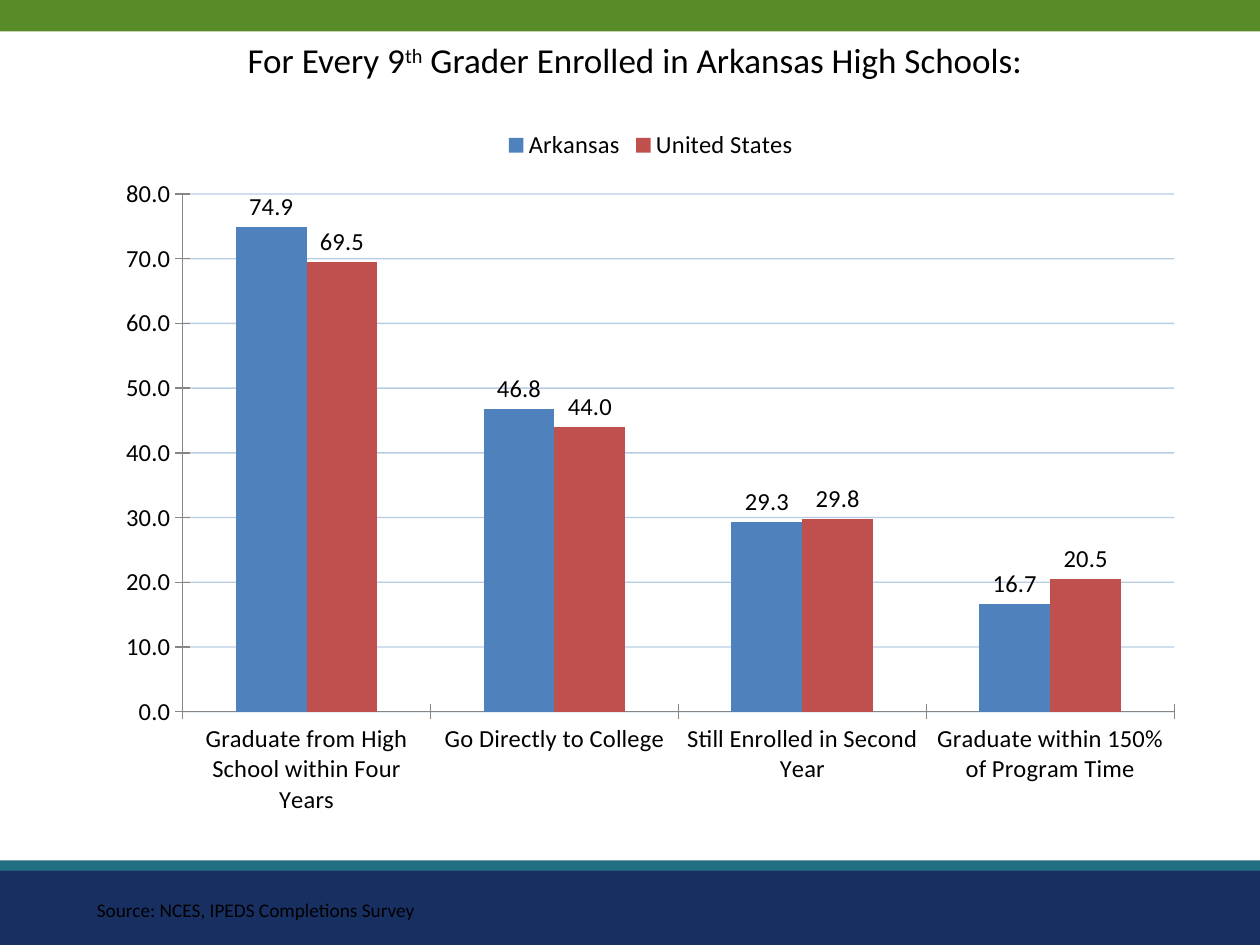
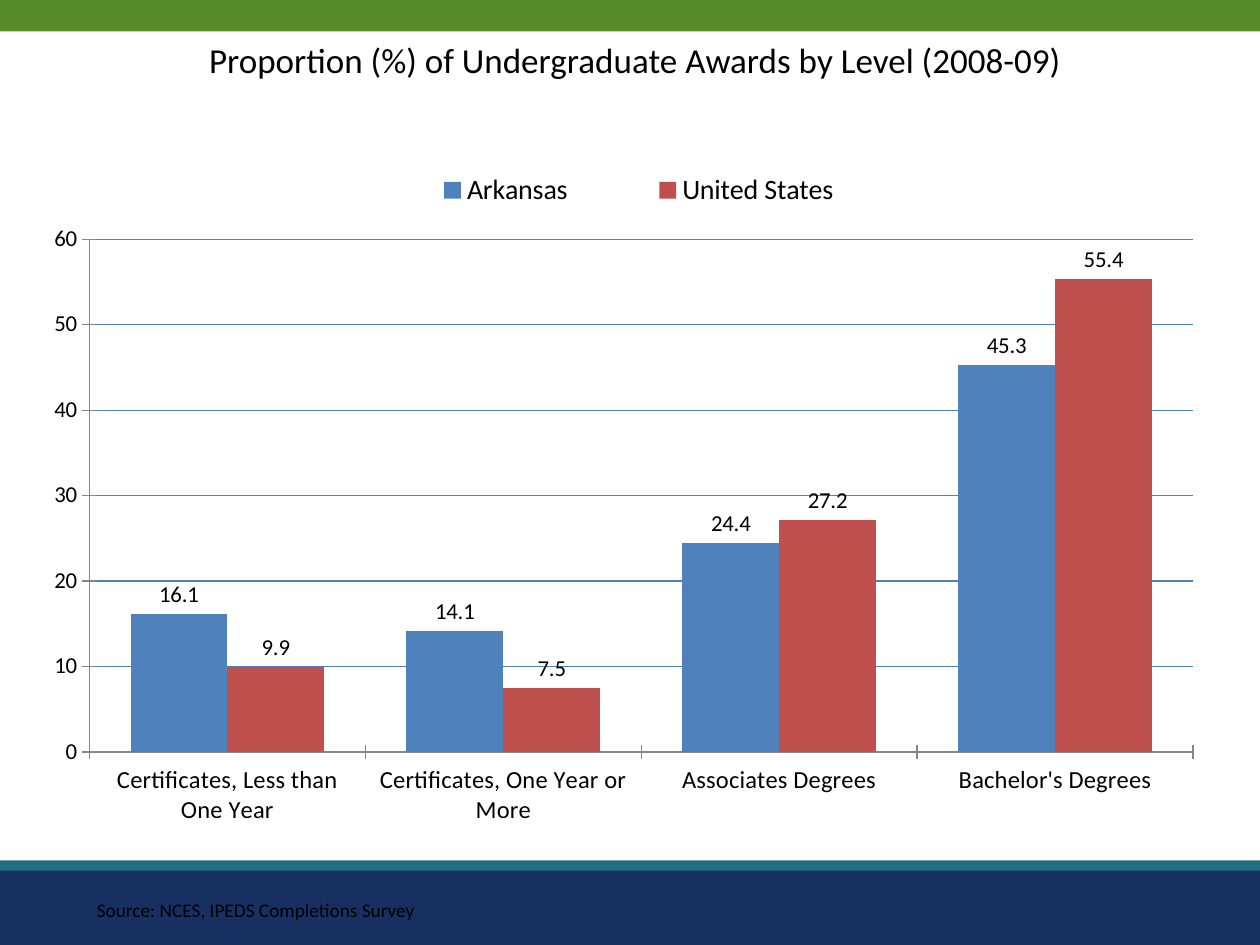
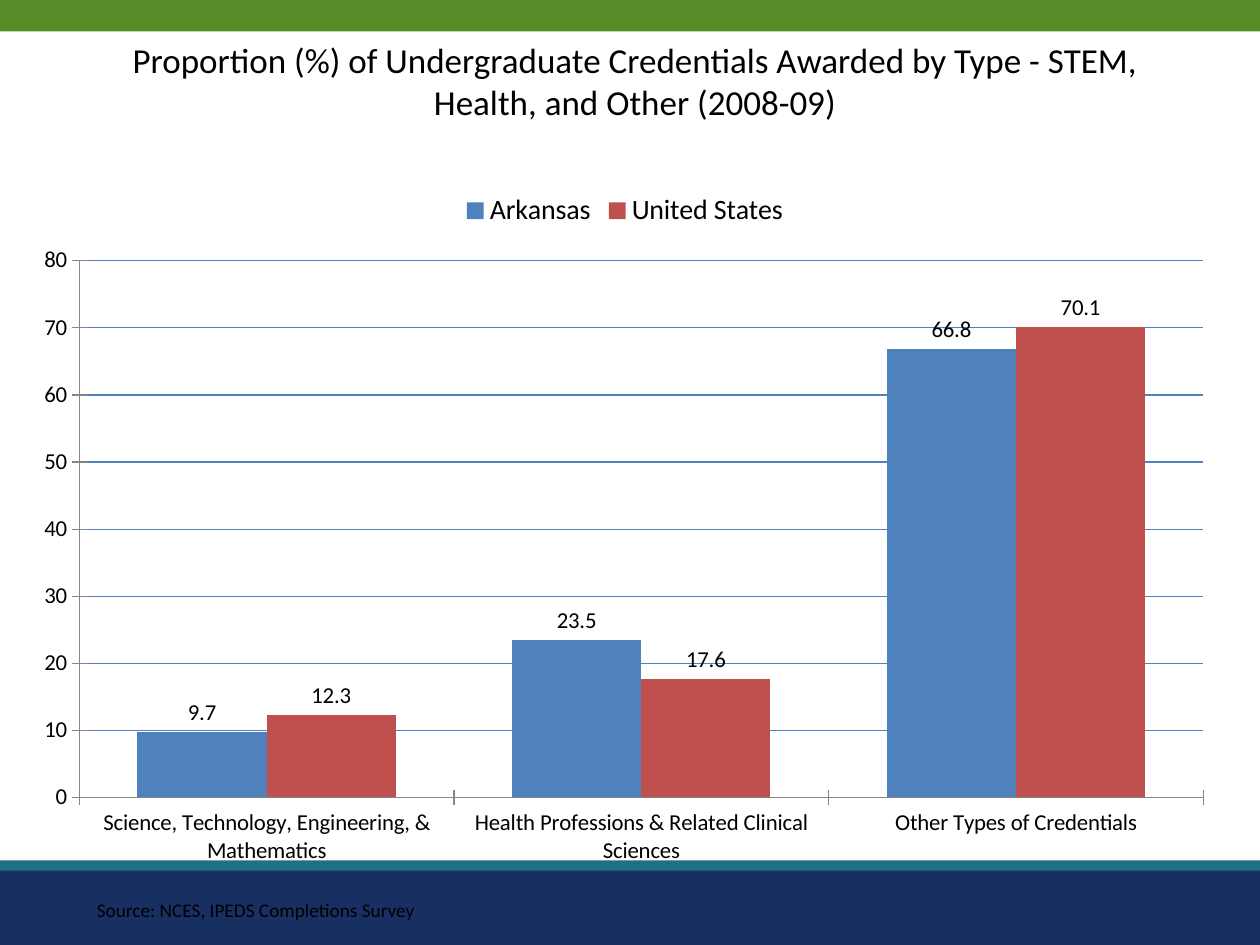
"""Build three column-chart slides on Arkansas education against the United States."""
from dataclasses import dataclass
from typing import NamedTuple, Optional

from lxml.etree import SubElement
from pptx import Presentation
from pptx.chart.axis import _BaseAxis
from pptx.chart.chart import Chart
from pptx.chart.data import CategoryChartData
from pptx.dml.color import RGBColor
from pptx.enum.chart import XL_CHART_TYPE, XL_LABEL_POSITION, XL_LEGEND_POSITION, XL_TICK_MARK
from pptx.enum.shapes import MSO_SHAPE
from pptx.enum.text import MSO_AUTO_SIZE, PP_ALIGN
from pptx.oxml.ns import qn
from pptx.oxml.xmlchemy import OxmlElement
from pptx.slide import Slide
from pptx.text.text import Font, _Paragraph
from pptx.util import Inches, Pt

NAVY = RGBColor(0x18, 0x2F, 0x62)
GREEN = RGBColor(0x58, 0x8C, 0x28)
TEAL = RGBColor(0x20, 0x6F, 0x82)
BLUE = RGBColor(0x4F, 0x81, 0xBD)
RED = RGBColor(0xC0, 0x50, 0x4D)
GRAY = RGBColor(0x86, 0x86, 0x86)
BLACK = RGBColor(0, 0, 0)
FONT = "Calibri"
SOURCE = "Source: NCES, IPEDS Completions Survey"
SERIES = (("Arkansas", BLUE), ("United States", RED))


class Box(NamedTuple):
    """A rectangle in inches."""
    x: float
    y: float
    w: float
    h: float

    def emu(self) -> list[int]:
        """Return the sides as lengths."""
        return [Inches(v) for v in self]

    def within(self, outer: "Box") -> list[float]:
        """Return the sides as fractions of an outer box."""
        return [(self.x - outer.x) / outer.w, (self.y - outer.y) / outer.h,
                self.w / outer.w, self.h / outer.h]


class Band(NamedTuple):
    """A coloured band across the slide."""
    box: Box
    color: RGBColor


@dataclass(frozen=True)
class ChartSlide:
    """Content of one slide; carets enclose superscript in the title."""
    title: str
    title_height: float
    frame: Box
    plot: Box
    categories: tuple[str, ...]
    values: tuple[tuple[float, ...], ...]
    top: int
    gap: int
    cat_size: int
    value_size: int
    legend_size: int
    axis_format: str
    label_format: str
    grid_alpha: int = 100
    legend: Optional[Box] = None


BANDS = (
    Band(Box(0, 6.83, 10, 0.67), NAVY),
    Band(Box(0, 0, 10, 0.25), GREEN),
    Band(Box(0, 6.83, 10, 0.08), TEAL),
)

SLIDES = (
    ChartSlide(
        "For Every 9^th^ Grader Enrolled in Arkansas High Schools:", 0.44,
        Box(0.83, 0.92, 8.67, 5.67), Box(1.45, 1.54, 7.87, 4.11),
        ("Graduate from High School within Four Years", "Go Directly to College",
         "Still Enrolled in Second Year", "Graduate within 150% of Program Time"),
        ((74.9, 46.8, 29.3, 16.7), (69.5, 44, 29.8, 20.5)),
        80, 150, 14, 14, 14, "0.0", "0.0", grid_alpha=40),
    ChartSlide(
        "Proportion (%) of Undergraduate Awards by Level (2008-09)", 0.44,
        Box(0.25, 1.25, 9.42, 5.41), Box(0.71, 1.9, 8.76, 4.07),
        ("Certificates, Less than One Year", "Certificates, One Year or More",
         "Associates Degrees", "Bachelor's Degrees"),
        ((16.1, 14.1, 24.4, 45.3), (9.9, 7.5, 27.2, 55.4)),
        60, 85, 14, 13, 16, "0", "0.0", legend=Box(2.87, 1.33, 4.4, 0.36)),
    ChartSlide(
        "Proportion (%) of Undergraduate Credentials Awarded by Type - STEM, "
        "Health, and Other (2008-09)", 0.77,
        Box(0.17, 1.42, 9.58, 5.56), Box(0.63, 2.07, 8.92, 4.26),
        ("Science, Technology, Engineering, & Mathematics",
         "Health Professions & Related Clinical Sciences", "Other Types of Credentials"),
        ((9.7, 23.5, 66.8), (12.3, 17.6, 70.1)),
        80, 90, 13, 13, 16, "#,##0", "#,##0.0"),
)


def style_font(font: Font, size: int) -> None:
    """Apply the shared typeface and colour at a size."""
    font.name, font.size, font.color.rgb = FONT, Pt(size), BLACK


def add_band(s: Slide, band: Band) -> None:
    """Draw a borderless band."""
    sp = s.shapes.add_shape(MSO_SHAPE.RECTANGLE, *band.box.emu())
    sp.shadow.inherit = False
    sp.fill.solid()
    sp.fill.fore_color.rgb = band.color
    sp.line.fill.background()


def add_text(s: Slide, box: Box, text: str, size: int) -> _Paragraph:
    """Add a wrapped text box, raising the parts between carets."""
    tf = s.shapes.add_textbox(*box.emu()).text_frame
    tf.word_wrap = True
    tf.auto_size = MSO_AUTO_SIZE.SHAPE_TO_FIT_TEXT
    p = tf.paragraphs[0]
    for i, part in enumerate(text.split("^")):
        r = p.add_run()
        r.text = part
        style_font(r.font, size)
        if i % 2:
            r.font._element.set("baseline", "30000")
    return p


def set_layout(chart: Chart, tag: str, index: int, box: Box, frame: Box) -> None:
    """Fix the place of a chart part inside its frame."""
    parent = chart.element.find(".//" + qn(tag))
    for old in parent.findall(qn("c:layout")):
        parent.remove(old)
    layout = OxmlElement("c:layout")
    parent.insert(index, layout)
    manual = SubElement(layout, qn("c:manualLayout"))
    settings = [("xMode", "edge"), ("yMode", "edge")]
    if tag == "c:plotArea":
        settings.insert(0, ("layoutTarget", "inner"))
    settings += [(k, f"{v:.4f}") for k, v in zip("xywh", box.within(frame))]
    for key, value in settings:
        SubElement(manual, qn(f"c:{key}")).set("val", value)


def style_axis(axis: _BaseAxis, size: int) -> None:
    """Set tick marks, line and labels of an axis."""
    axis.major_tick_mark = XL_TICK_MARK.CROSS
    axis.minor_tick_mark = XL_TICK_MARK.NONE
    axis.format.line.color.rgb = GRAY
    axis.format.line.width = Pt(0.75)
    style_font(axis.tick_labels.font, size)


def style_value_axis(chart: Chart, item: ChartSlide) -> None:
    """Set the scale, number format and gridlines."""
    axis = chart.value_axis
    style_axis(axis, item.value_size)
    axis.minimum_scale, axis.maximum_scale, axis.major_unit = 0, item.top, 10
    axis.tick_labels.number_format = item.axis_format
    axis.tick_labels.number_format_is_linked = False
    axis.has_major_gridlines = True
    line = axis.major_gridlines.format.line
    line.color.rgb = BLUE
    line.width = Pt(0.75)
    if item.grid_alpha < 100:
        color = axis._element.find(qn("c:majorGridlines")).find(".//" + qn("a:srgbClr"))
        SubElement(color, qn("a:alpha")).set("val", str(item.grid_alpha * 1000))


def add_columns(s: Slide, item: ChartSlide) -> None:
    """Add the clustered column chart."""
    data = CategoryChartData(number_format=item.label_format)
    data.categories = item.categories
    for (name, _), values in zip(SERIES, item.values):
        data.add_series(name, values)
    chart = s.shapes.add_chart(XL_CHART_TYPE.COLUMN_CLUSTERED, *item.frame.emu(), data).chart
    style_font(chart.font, 10)
    chart.has_title = False
    chart.has_legend = True
    chart.legend.position = XL_LEGEND_POSITION.TOP
    chart.legend.include_in_layout = False
    style_font(chart.legend.font, item.legend_size)
    style_axis(chart.category_axis, item.cat_size)
    style_value_axis(chart, item)
    plot = chart.plots[0]
    plot.gap_width, plot.overlap, plot.vary_by_categories = item.gap, 0, False
    for series, (_, color) in zip(plot.series, SERIES):
        series.format.fill.solid()
        series.format.fill.fore_color.rgb = color
        labels = series.data_labels
        labels.show_value = True
        labels.number_format = item.label_format
        labels.number_format_is_linked = False
        labels.position = XL_LABEL_POSITION.OUTSIDE_END
        style_font(labels.font, item.value_size)
    set_layout(chart, "c:plotArea", 0, item.plot, item.frame)
    if item.legend:
        set_layout(chart, "c:legend", 1, item.legend, item.frame)


def main() -> None:
    """Build and save the deck."""
    prs = Presentation()
    prs.slide_width, prs.slide_height = Inches(10), Inches(7.5)
    for item in SLIDES:
        s = prs.slides.add_slide(prs.slide_layouts[6])
        for band in BANDS:
            add_band(s, band)
        p = add_text(s, Box(0.75, 0.26, 8.58, item.title_height), item.title, 20)
        p.alignment = PP_ALIGN.CENTER
        add_text(s, Box(0.67, 7.08, 8.25, 0.29), SOURCE, 11)
        add_columns(s, item)
    prs.save("out.pptx")


if __name__ == "__main__":
    main()
